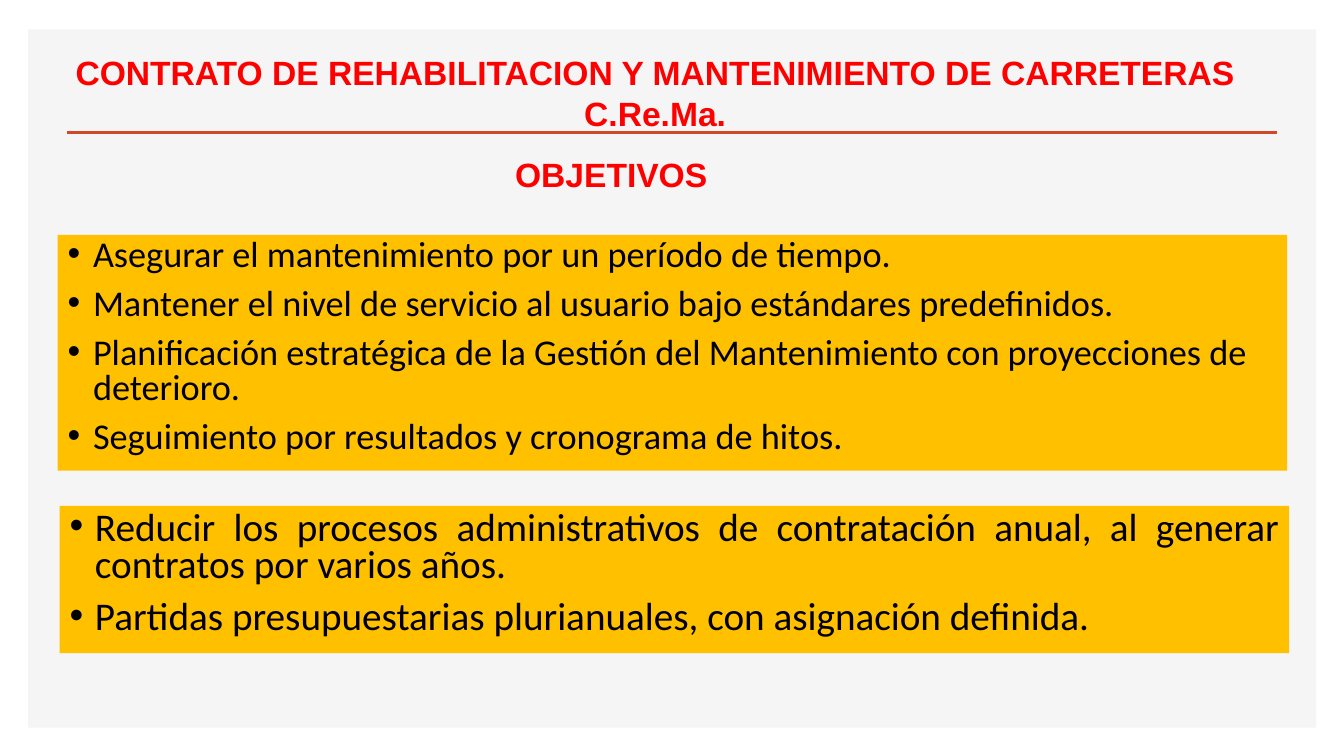
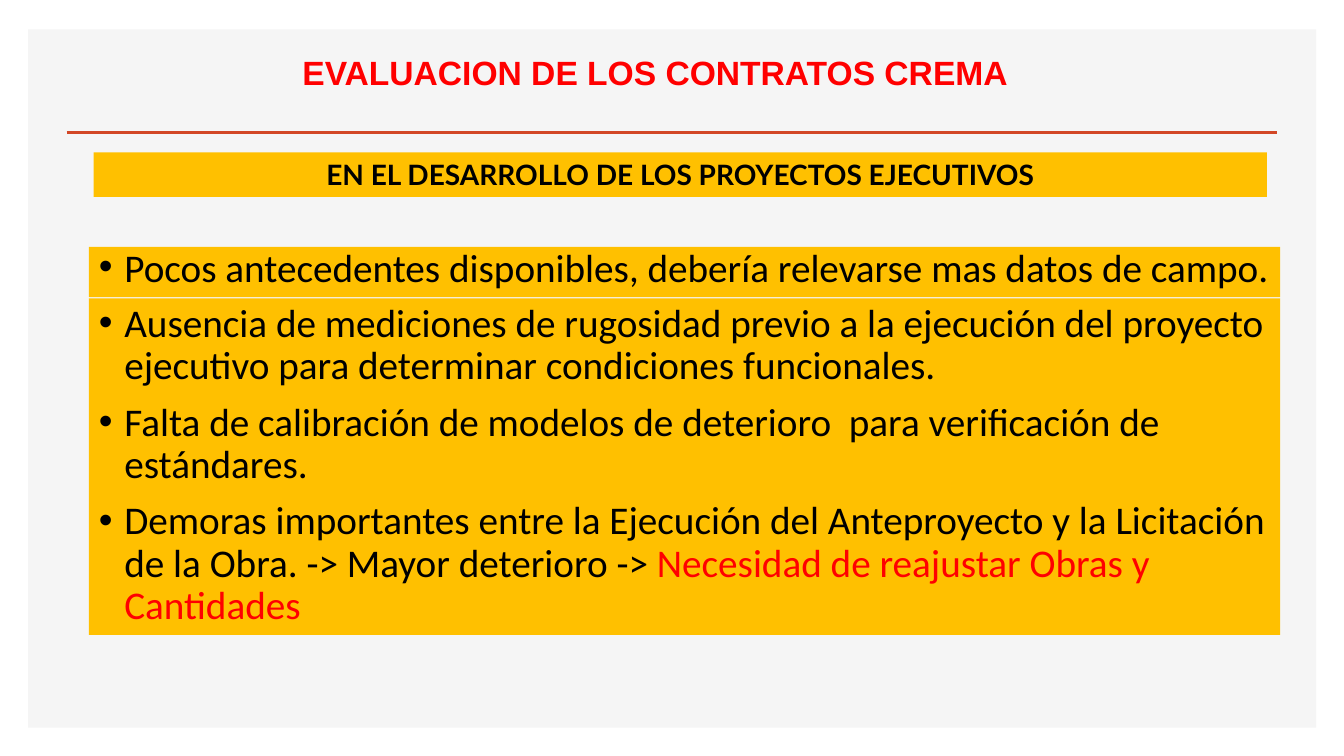
"""Build two slides on CREMA road contracts."""
import pptx
import pptx.util
import pptx.dml.color
import pptx.enum.shapes
import pptx.enum.text
import pptx.oxml
from pptx.util import Cm, Pt

ALIGN = pptx.enum.text.PP_ALIGN
RED, BLACK, AMBER = "FF0000", "000000", "FFC000"
PANEL, RULE = "F5F5F5", "D24726"


def rgb(color):
    return pptx.dml.color.RGBColor.from_string(color)


def setup(sp, box, fill=None):
    sp.left, sp.top, sp.width, sp.height = [Cm(v) for v in box]
    if fill:
        sp.fill.solid()
        sp.fill.fore_color.rgb = rgb(fill)
    tf = sp.text_frame
    tf.word_wrap = True
    tf.auto_size = pptx.enum.text.MSO_AUTO_SIZE.NONE
    tf.vertical_anchor = pptx.enum.text.MSO_ANCHOR.TOP
    return tf


slides = [
    {
        "title": "CONTRATO DE REHABILITACION Y MANTENIMIENTO DE CARRETERAS\nC.Re.Ma.",
        "heading": ("OBJETIVOS", (12.7, 3.76, 5.41, 1.27), None, "Arial", 24, RED),
        "lists": [
            ((1.45, 5.92, 30.99, 5.94), 25.9, 0.8, ALIGN.LEFT, [
                "Asegurar el mantenimiento por un período de tiempo.",
                "Mantener el nivel de servicio al usuario bajo estándares predefinidos.",
                "Planificación estratégica de la Gestión del Mantenimiento con proyecciones de deterioro.",
                "Seguimiento por resultados y cronograma de hitos.",
            ]),
            ((1.5, 12.75, 30.99, 3.71), 28, 0.8, ALIGN.JUSTIFY, [
                "Reducir los procesos administrativos de contratación anual, al generar contratos por varios años.",
                "Partidas presupuestarias plurianuales, con asignación definida.",
            ]),
        ],
    },
    {
        "title": "EVALUACION DE LOS CONTRATOS CREMA",
        "heading": ("EN EL DESARROLLO DE LOS PROYECTOS EJECUTIVOS",
                    (2.36, 3.84, 29.57, 1.12), AMBER, "Lato", 20, BLACK),
        "lists": [
            ((2.24, 6.22, 30.02, 1.27), 28, 0.8, ALIGN.LEFT, [
                "Pocos antecedentes disponibles, debería relevarse mas datos de campo.",
            ]),
            ((2.24, 7.52, 30.02, 8.48), 28, 0.9, ALIGN.LEFT, [
                "Ausencia de mediciones de rugosidad previo a la ejecución del proyecto ejecutivo para determinar condiciones funcionales.",
                "Falta de calibración de modelos de deterioro  para verificación de estándares.",
                "Demoras importantes entre la Ejecución del Anteproyecto y la Licitación de la Obra. -> Mayor deterioro -> |Necesidad de reajustar Obras y Cantidades",
            ]),
        ],
    },
]

prs = pptx.Presentation()
prs.slide_width, prs.slide_height = Cm(33.87), Cm(19.05)
layout = prs.slide_layouts.get_by_name("Two Content")

for number, data in enumerate(slides):
    s = prs.slides.add_slide(layout)

    if number == 0:
        panel = s.shapes.add_shape(pptx.enum.shapes.MSO_SHAPE.RECTANGLE,
                                   Cm(0.71), Cm(0.74), Cm(32.46), Cm(17.6))
        panel.shadow.inherit = False
        panel.fill.solid()
        panel.fill.fore_color.rgb = rgb(PANEL)
        panel.line.fill.background()
        rule = s.shapes.add_connector(pptx.enum.shapes.MSO_CONNECTOR.STRAIGHT,
                                      Cm(1.68), Cm(3.33), Cm(32.18), Cm(3.33))
        rule.line.color.rgb = rgb(RULE)
        rule.line.width = Pt(2)
        rule.element.spPr.append(pptx.oxml.parse_xml(
            '<a:effectLst xmlns:a="http://schemas.openxmlformats.org/drawingml/2006/main"/>'))
        layout.shapes.element.insert(2, panel.element)
        layout.shapes.element.insert(3, rule.element)

    text, box, fill, font, size, color = data["heading"]
    title_tf = setup(s.shapes.title, (1.5, 1.19, 30.02, 2.31))
    title_tf.text = data["title"]
    heading_tf = setup(s.shapes.add_textbox(0, 0, 0, 0), box, fill)
    heading_tf.text = text
    for tf, name, pts, ink in ((title_tf, "Arial", 24, RED), (heading_tf, font, size, color)):
        for p in tf.paragraphs:
            p.alignment = ALIGN.CENTER
            p.font.name, p.font.size, p.font.bold = name, Pt(pts), True
            p.font.color.rgb = rgb(ink)

    for idx, (box, size, spacing, align, items) in enumerate(data["lists"], 1):
        tf = setup(s.placeholders[idx], box, AMBER)
        for i, item in enumerate(items):
            p = tf.add_paragraph() if i else tf.paragraphs[0]
            pPr = p._p.get_or_add_pPr()
            pPr.set("marL", str(Cm(0.64)))
            pPr.set("indent", str(Cm(-0.64)))
            p.alignment = align
            p.line_spacing = spacing
            p.space_before = Pt(10 if i else 0)
            p.font.name, p.font.size = "Calibri", Pt(size)
            p.font.color.rgb = rgb(BLACK)
            plain, _, accent = item.partition("|")
            p.add_run().text = plain
            if accent:
                r = p.add_run()
                r.text = accent
                r.font.color.rgb = rgb(RED)

prs.save("out.pptx")
